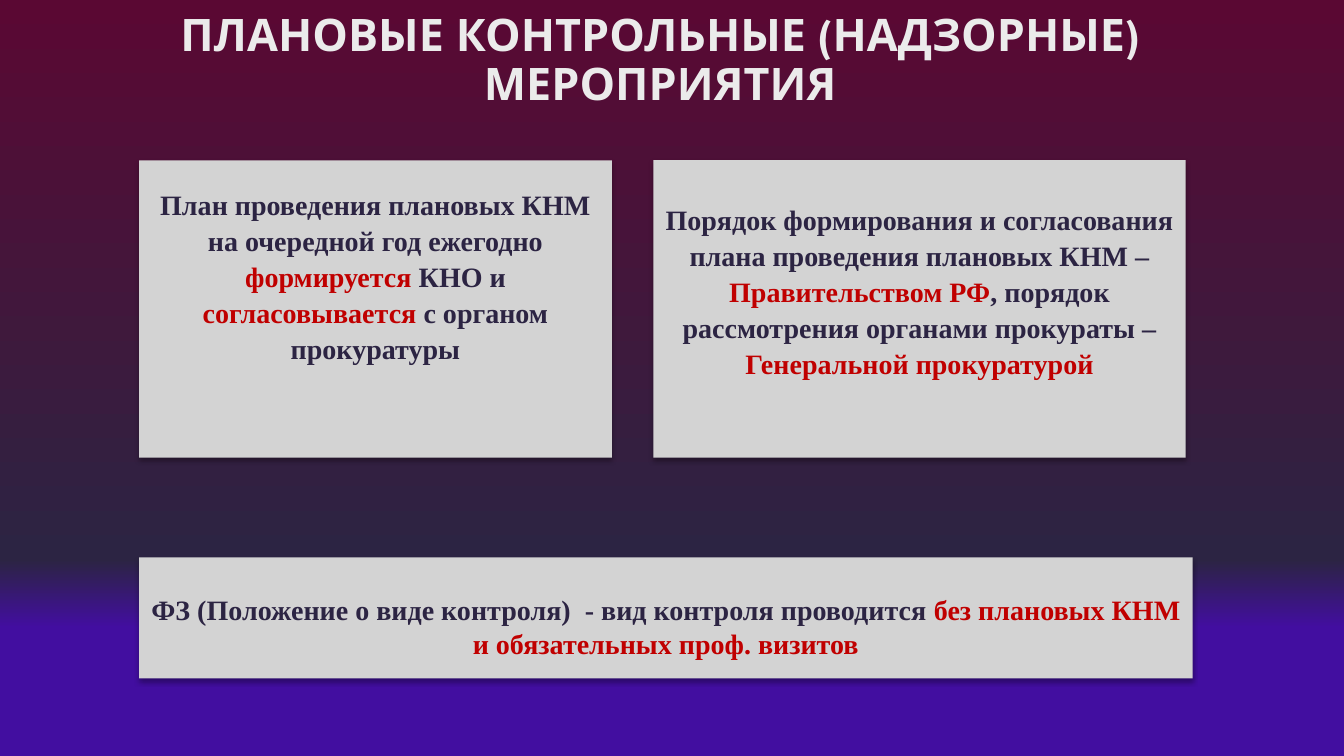
import pptx
import pptx.util
import pptx.dml.color
import pptx.enum.shapes
import pptx.enum.text
import pptx.oxml
import pptx.oxml.ns
from dataclasses import dataclass

Pt = pptx.util.Pt
Inches = pptx.util.Inches
RGB = pptx.dml.color.RGBColor.from_string
ALIGN = pptx.enum.text.PP_ALIGN
ANCHOR = pptx.enum.text.MSO_ANCHOR
qn = pptx.oxml.ns.qn
NS = pptx.oxml.ns.nsdecls("a")


@dataclass
class Theme:
    background: tuple = ((0, "5A0833"), (74, "2C2443"), (83, "420EA0"), (100, "420EA0"))
    card: str = "D3D3D3"
    light: str = "EBEBEB"
    dark: str = "2C2443"
    accent: str = "C00000"
    title_font: str = "League Spartan"
    body_font: str = "Times New Roman"
    title_size: int = 32
    body_size: int = 20


def write(p, text, font, size, color, bold=True):
    r = p.add_run()
    r.text = text
    r.font.name = font
    r.font.size = Pt(size)
    r.font.bold = bold
    r.font.color.rgb = RGB(color)


class Deck:
    def __init__(self, theme):
        self.theme = theme
        self.prs = pptx.Presentation()
        self.prs.slide_width, self.prs.slide_height = Inches(13.33), Inches(7.5)
        self.s = self.prs.slides.add_slide(self.prs.slide_layouts[1])

    def box(self, left, top, width, height):
        """Turn percentages of the slide into lengths."""
        w, h = self.prs.slide_width / 100, self.prs.slide_height / 100
        return [round(v) for v in (left * w, top * h, width * w, height * h)]

    def place(self, sp, box):
        sp.left, sp.top, sp.width, sp.height = self.box(*box)

    def frame(self, sp, anchor, line_spacing):
        tf = sp.text_frame
        tf.word_wrap = True
        tf.auto_size = pptx.enum.text.MSO_AUTO_SIZE.NONE
        tf.vertical_anchor = anchor
        p = tf.paragraphs[0]
        p.alignment = ALIGN.CENTER
        p.line_spacing = line_spacing
        p.space_before = Pt(0)
        return tf, p

    def background(self):
        fill = self.s.background.fill
        fill.gradient()
        fill.gradient_angle = 270
        stops = self.s.element.find(".//" + qn("a:gsLst"))
        stops.clear()
        for pos, color in self.theme.background:
            stops.append(pptx.oxml.parse_xml(
                f'<a:gs {NS} pos="{pos * 1000}"><a:srgbClr val="{color}"/></a:gs>'))

    def title(self, text, box):
        sp = self.s.shapes.title
        self.place(sp, box)
        tf, p = self.frame(sp, ANCHOR.BOTTOM, 0.9)
        write(p, text, self.theme.title_font, self.theme.title_size, self.theme.light)

    def card(self, runs, box, inset, line_spacing=1.07, sp=None):
        """Grey panel; runs alternate between dark and accent text."""
        t = self.theme
        if sp is None:
            sp = self.s.shapes.add_shape(
                pptx.enum.shapes.MSO_SHAPE.RECTANGLE, *self.box(*box))
        self.place(sp, box)
        sp.fill.solid()
        sp.fill.fore_color.rgb = RGB(t.card)
        sp.line.fill.background()
        self.shadow(sp)
        tf, p = self.frame(sp, ANCHOR.TOP, line_spacing)
        tf.margin_top = Inches(inset)
        pPr = p._p.get_or_add_pPr()
        pPr.set("marL", "0")
        pPr.set("indent", "0")
        pPr.append(pptx.oxml.parse_xml(f"<a:buNone {NS}/>"))
        for i, text in enumerate(runs):
            write(p, text, t.body_font, t.body_size, t.accent if i % 2 else t.dark)

    def shadow(self, sp):
        sp._element.spPr.append(pptx.oxml.parse_xml(
            f'<a:effectLst {NS}><a:outerShdw blurRad="{Pt(3.5)}" dist="{Pt(2.2)}" '
            'dir="5400000" rotWithShape="0"><a:srgbClr val="000000">'
            '<a:alpha val="32000"/></a:srgbClr></a:outerShdw></a:effectLst>'))


def main():
    d = Deck(Theme())
    left, top, height = 10.35, 21.2, 39.33

    # Background and heading
    d.background()
    d.title("ПЛАНОВЫЕ КОНТРОЛЬНЫЕ (НАДЗОРНЫЕ) МЕРОПРИЯТИЯ", (6.6, 0, 85.07, 15.2))

    # Yearly plan
    d.card(["План проведения плановых КНМ на очередной год ежегодно ", "формируется",
            " КНО и ", "согласовывается", " с органом прокуратуры"],
           (left, top, 35.18, height), 0.25, sp=d.s.placeholders[1])

    # Exception set by law
    d.card(["ФЗ (Положение о виде контроля)  - вид контроля проводится ",
            "без плановых КНМ и обязательных проф. визитов"],
           (left, 73.73, 78.39, 16), 0.35, line_spacing=1)

    # Who sets the procedure
    d.card(["Порядок формирования и согласования плана проведения плановых КНМ – ",
            "Правительством РФ", ", порядок рассмотрения органами прокураты – ",
            "Генеральной прокуратурой"],
           (48.61, top, 39.61, height), 0.4)

    d.prs.save("out.pptx")


if __name__ == "__main__":
    main()
